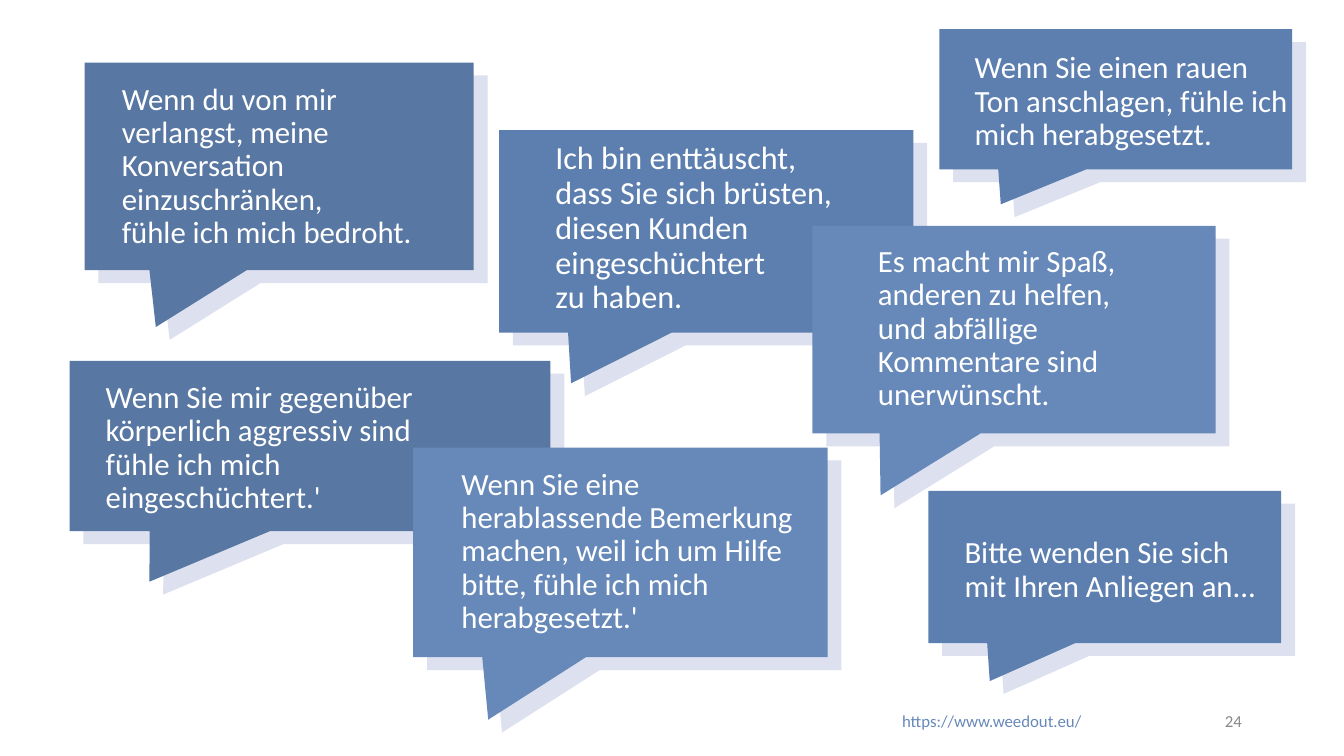
from typing import NamedTuple

from lxml.etree import SubElement
from pptx import Presentation
from pptx.dml.color import RGBColor
from pptx.enum.shapes import MSO_SHAPE as Preset
from pptx.enum.text import MSO_ANCHOR as Anchor, PP_ALIGN as Align
from pptx.oxml.ns import qn
from pptx.util import Inches, Pt

FONT = "Calibri"
WHITE, GRAY, SHADOW = "FFFFFF", "888888", "596BB2"
DARK, MEDIUM, LIGHT = "5877A2", "5D7FB0", "6789B9"


class Box(NamedTuple):
    """Position and size in percent of the slide's width and height."""
    left: float
    top: float
    width: float
    height: float


class Bubble(NamedTuple):
    box: Box
    text_box: Box
    tail: tuple[float, float]
    fill: str
    text: str
    size: int = 22


SHORT_TAIL = (-0.326, 0.75)
BUBBLES = [
    Bubble(Box(37.13, 17.2, 30.83, 26.8), Box(40.58, 17.47, 22.73, 30.53), SHORT_TAIL, MEDIUM,
           "Ich bin enttäuscht, dass Sie sich brüsten, diesen Kunden eingeschüchtert\vzu haben.", 23),
    Bubble(Box(6.3, 8.27, 28.95, 27.47), Box(8.33, 9.73, 26.93, 20.53), (-0.317, 0.774), DARK,
           "Wenn du von mir verlangst, meine Konversation einzuschränken,\vfühle ich mich bedroht."),
    Bubble(Box(60.45, 29.87, 30, 27.47), Box(64.58, 31.2, 22.88, 20.53), (-0.331, 0.798), LIGHT,
           "Es macht mir Spaß, anderen zu helfen, und abfällige Kommentare sind unerwünscht."),
    Bubble(Box(5.18, 47.73, 35.78, 22.53), Box(7.13, 49.2, 25.65, 20.53), (-0.334, 0.797), DARK,
           "Wenn Sie mir gegenüber körperlich aggressiv sind\vfühle ich mich eingeschüchtert.'"),
    Bubble(Box(69.9, 3.87, 26.25, 18.53), Box(71.78, 5.6, 24.98, 11.6), SHORT_TAIL, MEDIUM,
           "Wenn Sie einen rauen Ton anschlagen, fühle ich mich herabgesetzt."),
    Bubble(Box(30.75, 59.2, 30.83, 27.73), Box(33.6, 60.67, 27.98, 24.93), (-0.319, 0.798), LIGHT,
           "Wenn Sie eine herablassende Bemerkung machen, weil ich um Hilfe bitte, "
           "fühle ich mich herabgesetzt.'"),
    Bubble(Box(69.08, 64.93, 26.25, 20.13), Box(71.03, 69.73, 23.93, 11.6), SHORT_TAIL, MEDIUM,
           "Bitte wenden Sie sich mit Ihren Anliegen an..."),
]

presentation = Presentation()
presentation.slide_width, presentation.slide_height = Inches(13.33), Inches(7.5)
slide = presentation.slides.add_slide(presentation.slide_layouts[6])


def color(value: str) -> RGBColor:
    return RGBColor.from_string(value)


def place(box: Box) -> tuple[int, int, int, int]:
    width, height = presentation.slide_width, presentation.slide_height
    return (int(width * box.left / 100), int(height * box.top / 100),
            int(width * box.width / 100), int(height * box.height / 100))


def add_text(shapes, box: Box, text: str, size: int, font_color: str,
             margin: float = 0.1, spacing: float = 1.0,
             align: Align = Align.LEFT, anchor: Anchor = Anchor.TOP) -> None:
    text_frame = shapes.add_textbox(*place(box)).text_frame
    text_frame.word_wrap = True
    text_frame.vertical_anchor = anchor
    text_frame.margin_left = text_frame.margin_right = Inches(0.1)
    text_frame.margin_top = text_frame.margin_bottom = Inches(margin)
    paragraph = text_frame.paragraphs[0]
    paragraph.text = text
    paragraph.alignment = align
    paragraph.line_spacing = spacing
    for run in paragraph.runs:
        run.font.name = FONT
        run.font.size = Pt(size)
        run.font.color.rgb = color(font_color)


def add_shadow(shape) -> None:
    shape.shadow.inherit = False
    effects = shape._element.spPr.find(qn("a:effectLst"))
    shadow = SubElement(effects, qn("a:outerShdw"), blurRad="0", dist=str(Pt(13.5)),
                        dir=str(43 * 60000), algn="tl", rotWithShape="0")
    tint = SubElement(shadow, qn("a:srgbClr"), val=SHADOW)
    SubElement(tint, qn("a:alpha"), val="20000")


def add_bubble(bubble: Bubble) -> None:
    group = slide.shapes.add_group_shape()
    callout = group.shapes.add_shape(Preset.RECTANGULAR_CALLOUT, *place(bubble.box))
    callout.adjustments[0], callout.adjustments[1] = bubble.tail
    callout.fill.solid()
    callout.fill.fore_color.rgb = color(bubble.fill)
    callout.line.fill.background()
    add_shadow(callout)
    add_text(group.shapes, bubble.text_box, bubble.text, bubble.size, WHITE, spacing=0.9)


# Footer: page number and web address
add_text(slide.shapes, Box(70.65, 92.67, 22.5, 5.33), "24", 12, GRAY,
         margin=0.05, align=Align.RIGHT, anchor=Anchor.MIDDLE)
add_text(slide.shapes, Box(66.38, 93.33, 22.43, 4), "https://www.weedout.eu/", 12, LIGHT, margin=0.05)

# Speech bubbles, from back to front
for bubble in BUBBLES:
    add_bubble(bubble)

presentation.save("out.pptx")
